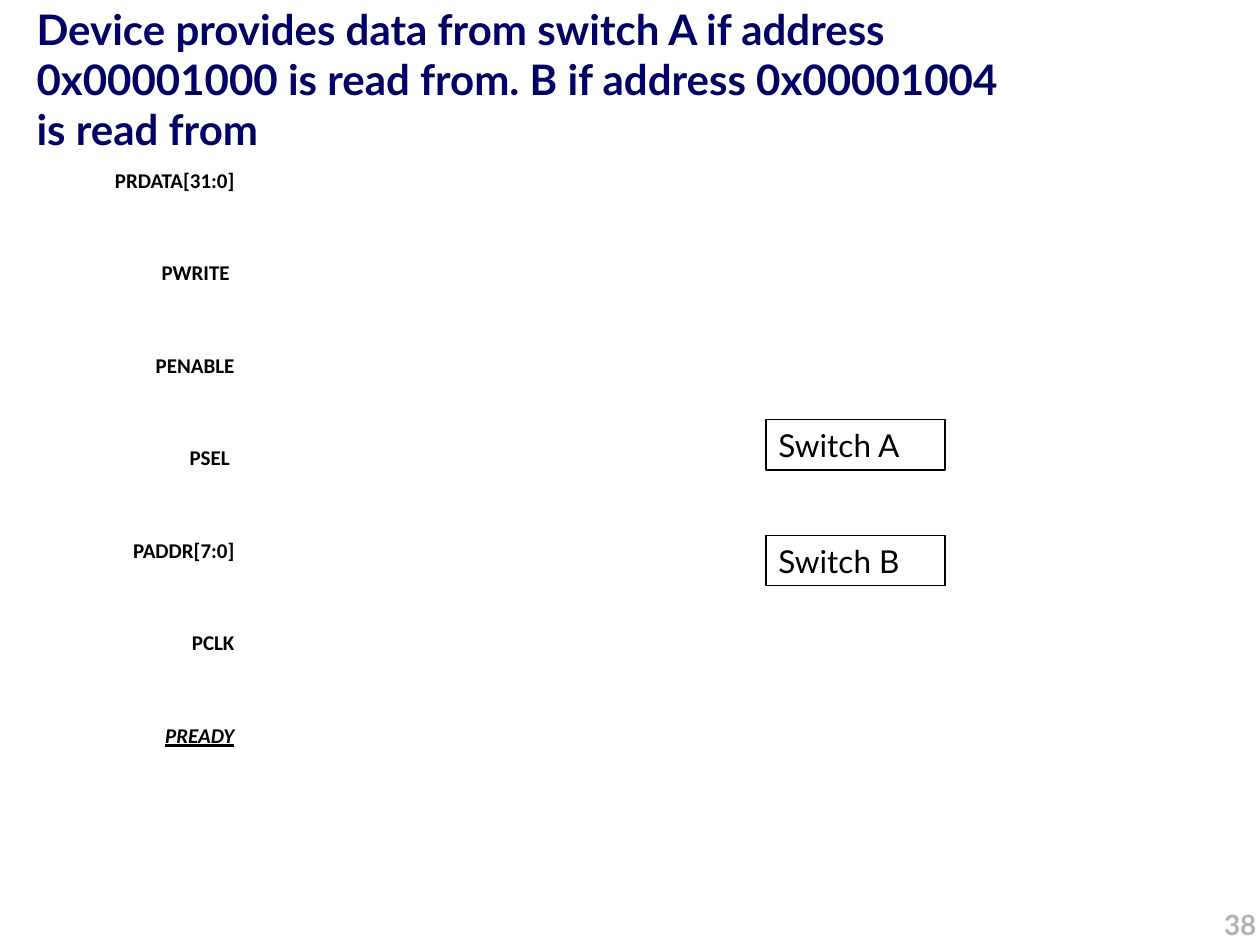
from pptx import Presentation
from pptx.dml.color import RGBColor
from pptx.enum.shapes import MSO_SHAPE
from pptx.enum.text import MSO_ANCHOR, MSO_AUTO_SIZE, PP_ALIGN
from pptx.util import Inches, Pt


def color(hex_string):
    return RGBColor.from_string(hex_string)


def write(paragraph, text, size, font="Lato", fill="000000", bold=False,
          italic=False, underline=False, align=PP_ALIGN.LEFT):
    paragraph.text = text
    paragraph.alignment = align
    for run in paragraph.runs:
        run.font.name = font
        run.font.size = Pt(size)
        run.font.color.rgb = color(fill)
        run.font.bold = bold
        run.font.italic = italic
        run.font.underline = underline


presentation = Presentation()
presentation.slide_width = Inches(10)
presentation.slide_height = Inches(7.5)
slide = presentation.slides.add_slide(presentation.slide_layouts[5])

title = slide.shapes.title
title.left, title.top = Inches(0.19), Inches(0)
title.width, title.height = Inches(9.71), Inches(1.25)
title.text_frame.auto_size = MSO_AUTO_SIZE.NONE
title.text_frame.vertical_anchor = MSO_ANCHOR.MIDDLE
write(title.text_frame.paragraphs[0],
      "Device provides data from switch A if address \v"
      "0x00001000 is read from. B if address 0x00001004\v"
      "is read from",
      size=24, fill="000066", bold=True)

slide_number = slide.shapes.add_textbox(
    Inches(6.9), Inches(7.15), Inches(3.17), Inches(0.5))
slide_number.text_frame.word_wrap = True
write(slide_number.text_frame.paragraphs[0], "38", size=16, fill="B2B2B2",
      bold=True, align=PP_ALIGN.RIGHT)

signal_list = slide.shapes.add_shape(
    MSO_SHAPE.RECTANGLE, Inches(0.68), Inches(1.25), Inches(1.28), Inches(5.75))
signal_list.shadow.inherit = False
signal_list.fill.solid()
signal_list.fill.fore_color.rgb = color("FFFFFF")
signal_list.line.fill.background()
signal_frame = signal_list.text_frame
signal_frame.word_wrap = True
signal_frame.vertical_anchor = MSO_ANCHOR.TOP
signals = ["PRDATA[31:0]", "PWRITE ", "PENABLE", "PSEL ", "PADDR[7:0]", "PCLK", "PREADY"]
for index, signal in enumerate(signals):
    paragraph = signal_frame.add_paragraph() if index else signal_frame.paragraphs[0]
    optional = signal == "PREADY"
    write(paragraph, signal, size=12, font="Calibri", bold=True,
          italic=optional, underline=optional, align=PP_ALIGN.RIGHT)
    paragraph.line_spacing = 1.15
    paragraph.space_after = Pt(36.3)

for index, name in enumerate(["Switch A", "Switch B"]):
    switch = slide.shapes.add_shape(
        MSO_SHAPE.RECTANGLE, Inches(6.08), Inches(3.33 + 0.92 * index),
        Inches(1.42), Inches(0.4))
    switch.shadow.inherit = False
    switch.fill.background()
    switch.line.color.rgb = color("000000")
    switch.line.width = Pt(0.75)
    switch.text_frame.word_wrap = True
    switch.text_frame.auto_size = MSO_AUTO_SIZE.SHAPE_TO_FIT_TEXT
    switch.text_frame.vertical_anchor = MSO_ANCHOR.TOP
    write(switch.text_frame.paragraphs[0], name, size=18)

presentation.save("out.pptx")
